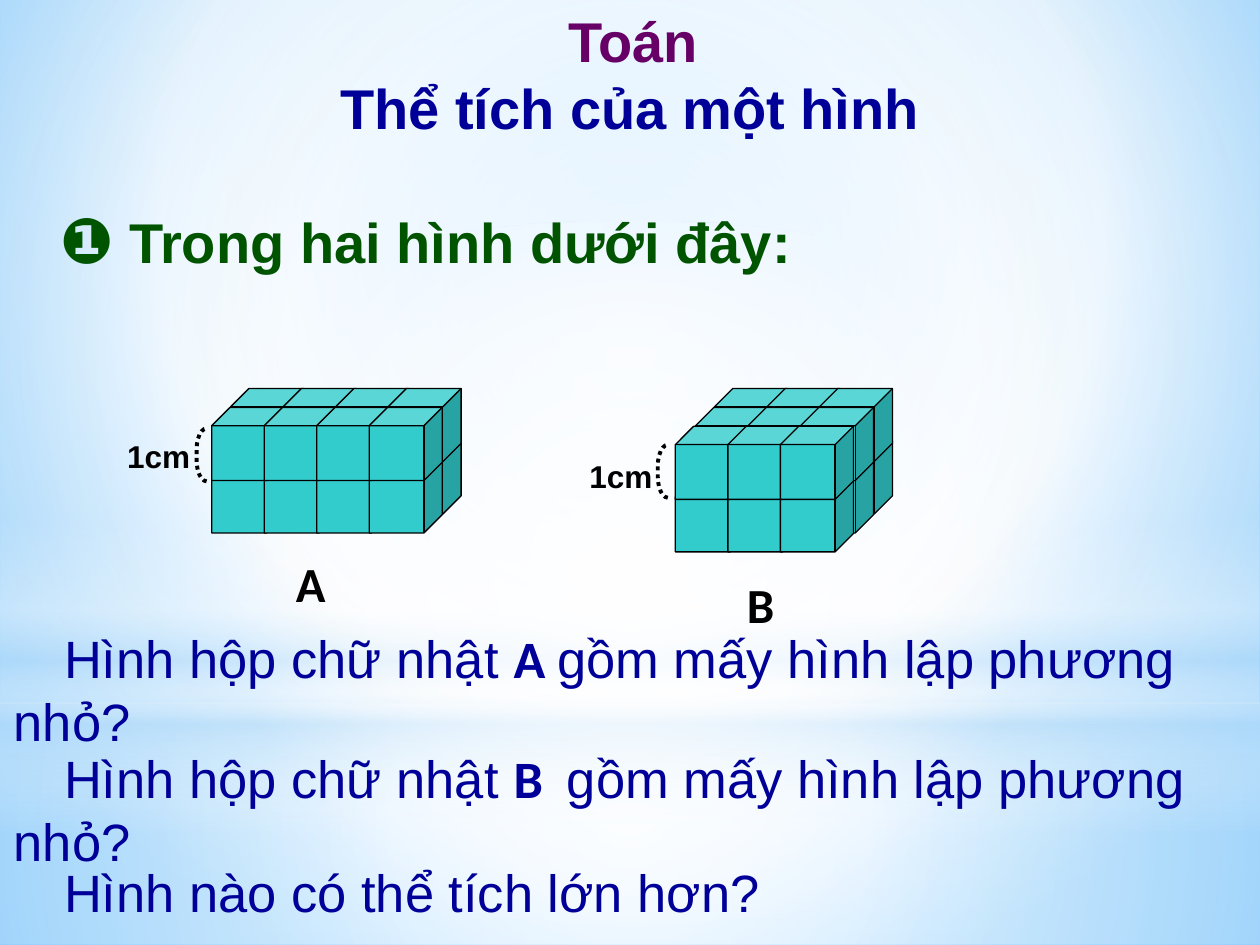
from dataclasses import dataclass

from lxml import etree
from pptx import Presentation, util as u
from pptx.dml.color import RGBColor
from pptx.enum import dml, shapes, text
from pptx.oxml import ns

Inches = u.Inches
SHAPE = shapes.MSO_SHAPE
CENTER, JUSTIFY = text.PP_ALIGN.CENTER, text.PP_ALIGN.JUSTIFY
BLACK, NAVY, GREEN, PURPLE, TEAL = "000000", "000099", "005400", "660066", "33CCCC"
CUBE, STEP = 0.58, 5 / 12


@dataclass
class Stop:
    pos: int
    color: str
    alpha: int = 100


@dataclass
class Glow:
    kind: int
    top: float
    height: float
    stops: list[Stop]
    angle: int | None = None


@dataclass
class Block:
    """A cuboid of cubes; rows hold the bottom-left cube of each row, back to front."""
    name: str
    columns: int
    rows: list[tuple[float, float]]
    bracket: tuple[float, float]
    unit: tuple[float, float]
    label: tuple[float, float]
    label_width: float


GLOWS = [
    Glow(SHAPE.RECTANGLE, 5.58, 1.92,
         [Stop(0, "FFFFFF", 91), Stop(37, "FFFFFF", 76), Stop(100, "B4DCFA", 79)]),
    Glow(SHAPE.RECTANGLE, 0, 5.58,
         [Stop(0, "FFFFFF", 89), Stop(48, "FFFFFF", 62), Stop(100, "B4DCFA", 79)]),
    Glow(SHAPE.RECTANGLE, 4.12, 2.5,
         [Stop(0, "FFFFFF", 0), Stop(29, "FFFFFF", 30), Stop(45, "B4DCFA", 40),
          Stop(55, "FFFFFF", 26), Stop(65, "B4DCFA", 60), Stop(100, "FFFFFF", 0)], 90),
    Glow(SHAPE.OVAL, 1.75, 5.58, [Stop(0, "FFFFFF"), Stop(56, "FFFFFF", 0)]),
]
BLOCKS = [
    Block("A", 4, [(1.83, 3.5), (1.68, 3.65)],
          (1.56, 3.4), (0.91, 3.42), (2.25, 4.34), 0.6),
    Block("B", 3, [(5.67, 3.5), (5.52, 3.65), (5.36, 3.8)],
          (5.22, 3.53), (4.58, 3.58), (5.83, 4.51), 0.33),
]


def rgb(color: str) -> RGBColor:
    return RGBColor.from_string(color)


def set_gradient(owner, stops: list[Stop], angle: int | None = None,
                 center=(50, 50, 50, 50)) -> None:
    """Give a shape or background a gradient: linear with an angle, else circular."""
    owner.fill.solid()
    root = owner.element if hasattr(owner, "element") else owner._cSld
    solid = root.find(".//" + ns.qn("a:solidFill"))
    grad = etree.Element(ns.qn("a:gradFill"), rotWithShape="1")
    stop_list = etree.SubElement(grad, ns.qn("a:gsLst"))
    for stop in stops:
        gs = etree.SubElement(stop_list, ns.qn("a:gs"), pos=str(stop.pos * 1000))
        color = etree.SubElement(gs, ns.qn("a:srgbClr"), val=stop.color)
        if stop.alpha < 100:
            etree.SubElement(color, ns.qn("a:alpha"), val=str(stop.alpha * 1000))
    if angle is not None:
        etree.SubElement(grad, ns.qn("a:lin"), ang=str(angle * 60000), scaled="0")
    else:
        circle = etree.SubElement(grad, ns.qn("a:path"), path="circle")
        sides = {side: str(v * 1000) for side, v in zip("ltrb", center)}
        etree.SubElement(circle, ns.qn("a:fillToRect"), sides)
    solid.getparent().replace(solid, grad)


def add_shape(s, kind: int, x: float, y: float, w: float, h: float):
    sp = s.shapes.add_shape(kind, Inches(x), Inches(y), Inches(w), Inches(h))
    sp.shadow.inherit = False
    return sp


def add_glow(s, glow: Glow) -> None:
    sp = add_shape(s, glow.kind, 0, glow.top, 10, glow.height)
    sp.line.fill.background()
    set_gradient(sp, glow.stops, glow.angle)


def add_cube(s, x: float, y: float) -> None:
    sp = add_shape(s, SHAPE.CUBE, x, y, CUBE, CUBE)
    sp.adjustments[0] = 0.25
    sp.fill.solid()
    sp.fill.fore_color.rgb = rgb(TEAL)
    sp.line.color.rgb = rgb(BLACK)
    sp.line.width = u.Pt(0.75)


def add_bracket(s, x: float, y: float) -> None:
    sp = add_shape(s, SHAPE.LEFT_BRACKET, x, y, 0.08, 0.42)
    sp.adjustments[0] = 2.146
    sp.fill.background()
    sp.line.color.rgb = rgb(BLACK)
    sp.line.width = u.Pt(2.25)
    sp.line.dash_style = dml.MSO_LINE.ROUND_DOT


def add_box(s, x: float, y: float, w: float, h: float, wrap: bool = True):
    tf = s.shapes.add_textbox(Inches(x), Inches(y), Inches(w), Inches(h)).text_frame
    tf.word_wrap = wrap
    return tf


def add_run(p, content: str, *, size: float, color: str = BLACK,
            bold: bool = False, font: str = "Arial") -> None:
    r = p.add_run()
    r.text = content
    r.font.name, r.font.size, r.font.bold = font, u.Pt(size), bold
    r.font.color.rgb = rgb(color)


def set_indent(p, margin: float, first: float) -> None:
    pPr = p._p.get_or_add_pPr()
    pPr.set("marL", str(Inches(margin)))
    pPr.set("indent", str(Inches(first)))


def add_block(s, block: Block) -> None:
    for layer in range(2):
        for x, y in block.rows:
            for column in range(block.columns):
                add_cube(s, x + column * STEP, y - layer * STEP)
    add_bracket(s, *block.bracket)
    unit = add_box(s, *block.unit, 0.71, 0.4, wrap=False)
    add_run(unit.paragraphs[0], "1cm", size=18, bold=True)
    label = add_box(s, *block.label, block.label_width, 0.57)
    add_run(label.paragraphs[0], block.name, size=28, bold=True, font="Calibri")


def add_question(s, y: float, h: float, start: str, name: str = "", end: str = "") -> None:
    p = add_box(s, 0.01, y, 9.99, h).paragraphs[0]
    set_indent(p, 0, 0.4)
    add_run(p, start, size=30, color=NAVY)
    if name:
        add_run(p, name, size=30, color=NAVY, bold=True, font="Calibri")
        add_run(p, end, size=30, color=NAVY)


def main() -> None:
    prs = Presentation()
    prs.slide_width, prs.slide_height = Inches(10), Inches(7.5)
    s = prs.slides.add_slide(prs.slide_layouts[6])
    set_gradient(s.background, [Stop(0, "9ED5FF"), Stop(60, "FFFFFF"), Stop(100, "5BB9FF")],
                 center=(20, 10, 20, 60))
    for glow in GLOWS:
        add_glow(s, glow)
    for block in BLOCKS:
        add_block(s, block)

    for y, name in ((4.92, "A "), (5.87, "B  ")):
        add_question(s, y, 1.11, "Hình hộp chữ nhật ", name, "gồm mấy hình lập phương nhỏ?")
    add_question(s, 6.78, 0.61, "Hình nào có thể tích lớn hơn?")

    p = add_box(s, 0.38, 1.54, 6.07, 0.71, wrap=False).paragraphs[0]
    p.alignment = JUSTIFY
    add_run(p, "❶", size=36, color=GREEN, bold=True)
    add_run(p, " Trong hai hình dưới đây:", size=32, color=GREEN, bold=True)

    tf = add_box(s, 0, 0, 10, 1.9)
    subject, title = tf.paragraphs[0], tf.add_paragraph()
    set_indent(subject, 0.05, 0)
    set_indent(title, 0.38, -0.38)
    for p, content, color in ((subject, "Toán", PURPLE), (title, "Thể tích của một hình", NAVY)):
        p.alignment = CENTER
        add_run(p, content, size=32, color=color, bold=True)
    prs.save("out.pptx")


if __name__ == "__main__":
    main()
